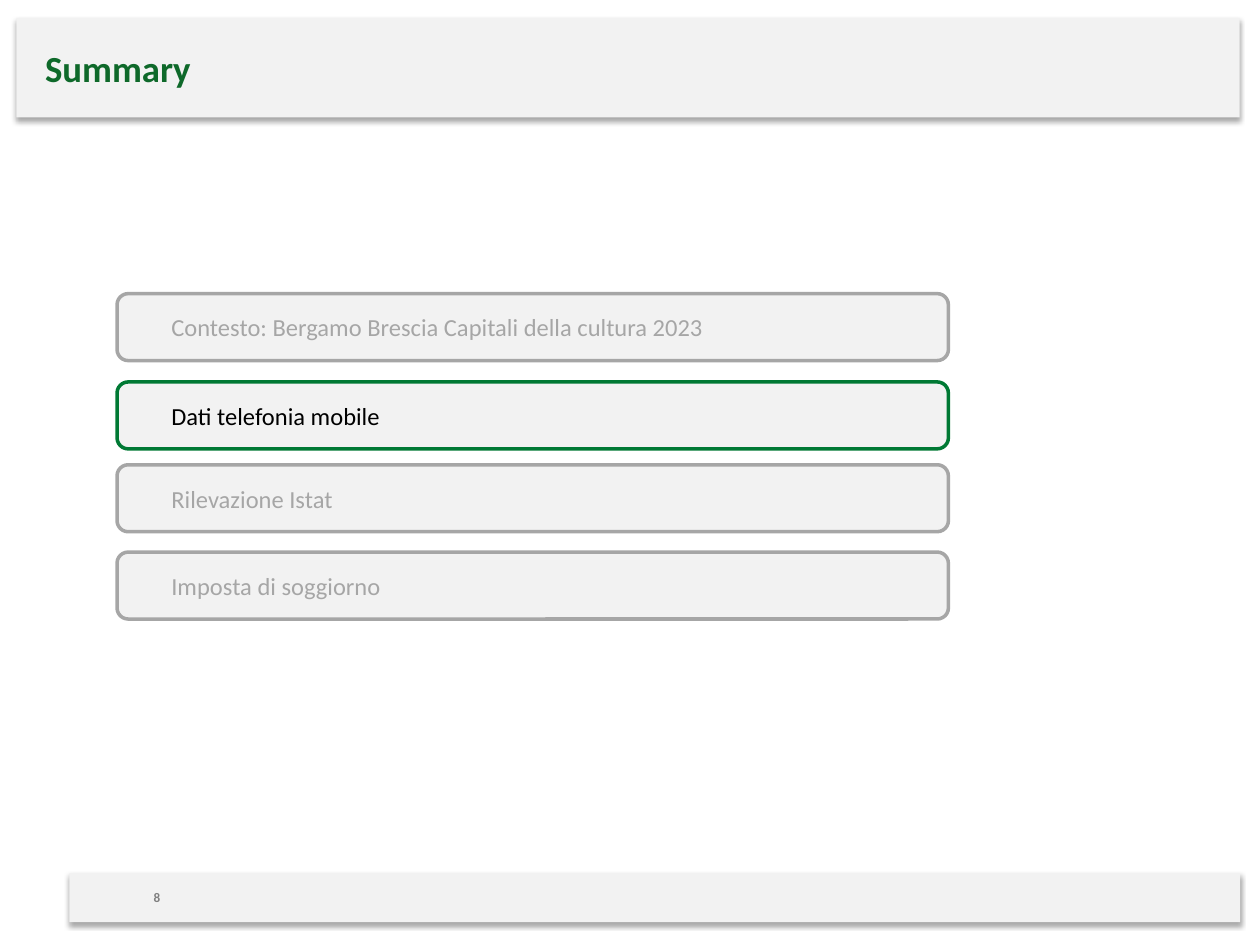
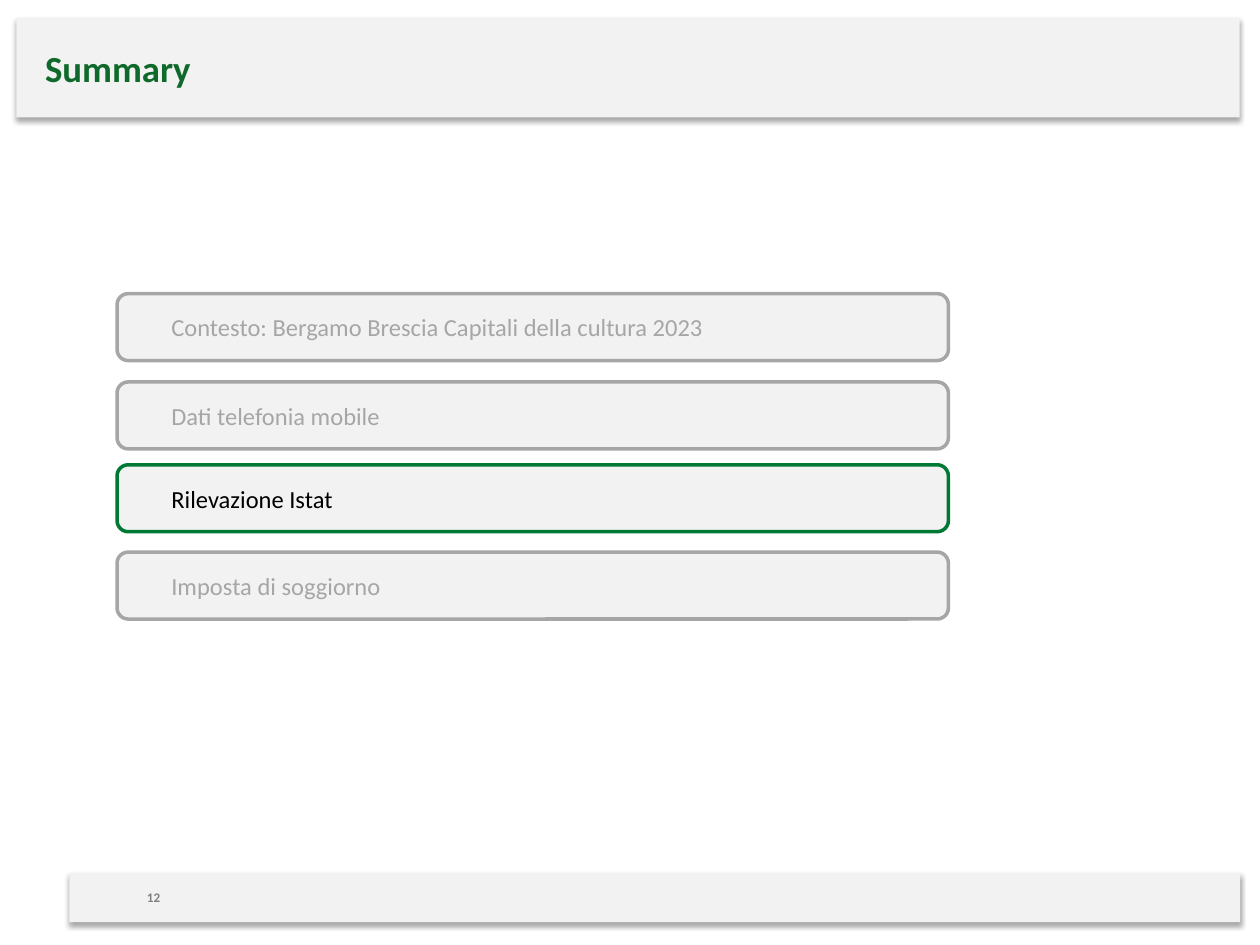
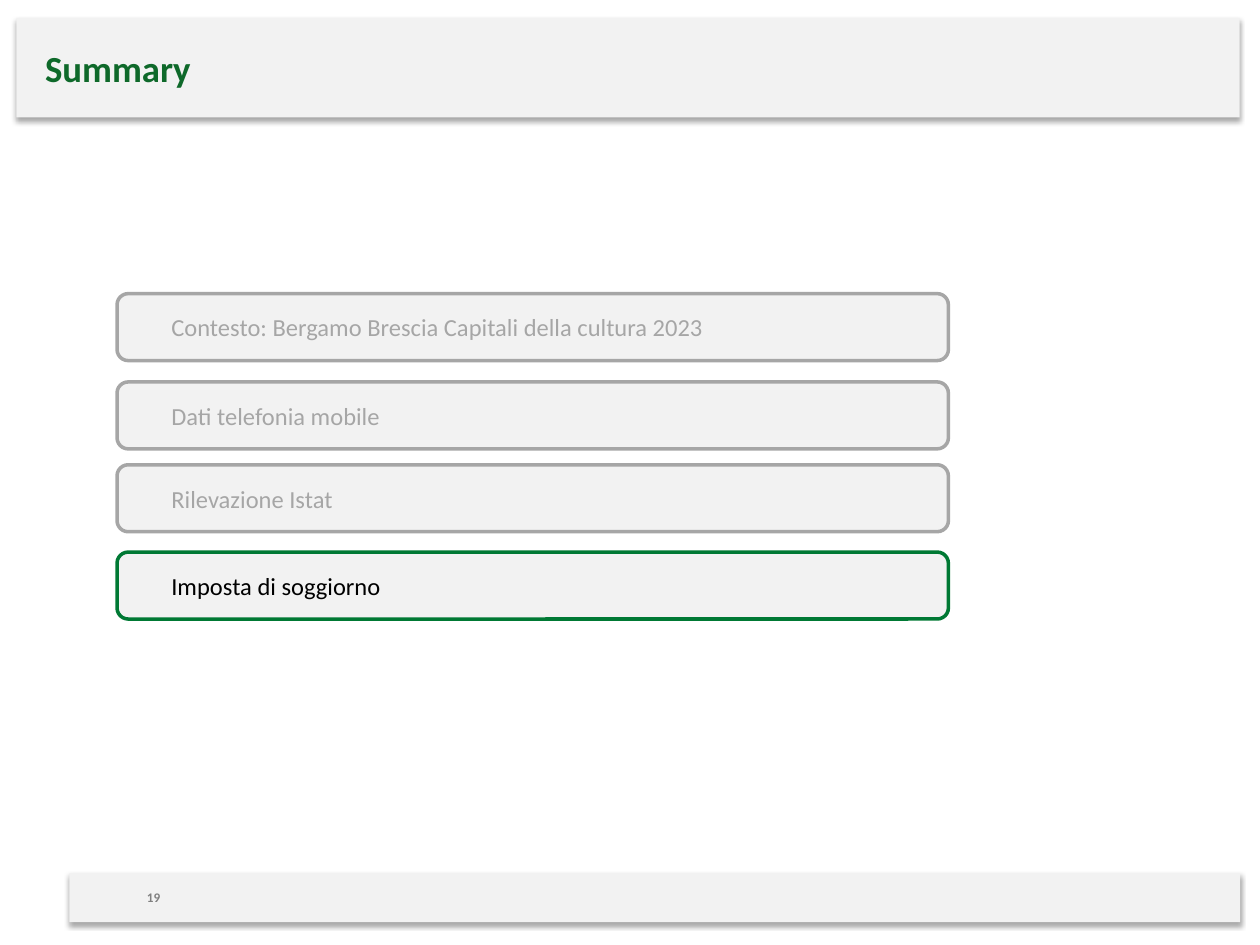
from lxml.etree import SubElement
from pptx import Presentation
from pptx.dml.color import RGBColor
from pptx.enum.shapes import MSO_SHAPE
from pptx.enum.text import MSO_ANCHOR, PP_ALIGN
from pptx.oxml import parse_xml
from pptx.oxml.ns import qn
from pptx.util import Cm, Pt

COLORS = {
    "panel": "F2F2F2",
    "title": "0E692A",
    "active_line": "007934",
    "active_text": "000000",
    "muted": "A6A6A6",
    "page": "808080",
    "shadow": "000000",
}
FONT = "Calibri"
SHADOW = (
    '<a:effectLst xmlns:a="http://schemas.openxmlformats.org/drawingml/2006/main">'
    '<a:outerShdw blurRad="39370" dist="22860" dir="5400000" rotWithShape="0">'
    f'<a:srgbClr val="{COLORS["shadow"]}"><a:alpha val="35000"/></a:srgbClr>'
    "</a:outerShdw></a:effectLst>"
)
BANDS = [(0.33, 0.36, 24.66, 2.01), (1.4, 17.6, 23.6, 0.99)]
CHAPTERS = [
    ("Contesto: Bergamo Brescia Capitali della cultura 2023", 5.92),
    ("Dati telefonia mobile", 7.7),
    ("Rilevazione Istat", 9.37),
    ("Imposta di soggiorno", 11.13),
]
SUMMARIES = [
    ("8", "Dati telefonia mobile"),
    ("12", "Rilevazione Istat"),
    ("19", "Imposta di soggiorno"),
]


def add_panel(slide, outline, box):
    panel = slide.shapes.add_shape(outline, *map(Cm, box))
    panel.shadow.inherit = False
    panel.fill.solid()
    panel.fill.fore_color.rgb = RGBColor.from_string(COLORS["panel"])
    panel.line.fill.background()
    return panel


def write(shape, text, size, color, bold=False, align=PP_ALIGN.LEFT, anchor=MSO_ANCHOR.MIDDLE):
    frame = shape.text_frame
    frame.word_wrap = True
    frame.vertical_anchor = anchor
    paragraph = frame.paragraphs[0]
    paragraph.alignment = align
    run = paragraph.add_run()
    run.text = text
    run.font.name = FONT
    run.font.size = Pt(size)
    run.font.bold = bold
    run.font.color.rgb = RGBColor.from_string(COLORS[color])
    return paragraph


deck = Presentation()
deck.slide_width = Cm(25.4)
deck.slide_height = Cm(19.05)

for page, current in SUMMARIES:
    slide = deck.slides.add_slide(deck.slide_layouts[6])

    for box in BANDS:
        band = add_panel(slide, MSO_SHAPE.RECTANGLE, box)
        properties = band.element.spPr
        properties.replace(properties.find(qn("a:effectLst")), parse_xml(SHADOW))

    title = slide.shapes.add_textbox(Cm(0.66), Cm(0.58), Cm(23.93), Cm(1.57))
    write(title, "Summary", 21, "title", bold=True)

    page_number = slide.shapes.add_textbox(Cm(2.06), Cm(17.81), Cm(1.42), Cm(0.53))
    write(page_number, page, 7.5, "page", bold=True, align=PP_ALIGN.RIGHT, anchor=MSO_ANCHOR.TOP)

    for name, top in CHAPTERS:
        active = name == current
        chapter = add_panel(slide, MSO_SHAPE.ROUNDED_RECTANGLE, (2.36, top, 16.76, 1.35))
        chapter.line.color.rgb = RGBColor.from_string(COLORS["active_line" if active else "muted"])
        chapter.line.width = Pt(2)
        chapter.text_frame.margin_left = Cm(0.19)
        label = write(chapter, name, 14, "active_text" if active else "muted")
        label.space_after = Pt(9)
        indent = label._p.get_or_add_pPr()
        indent.set("marL", str(Cm(0.84)))
        indent.set("indent", "0")
        SubElement(indent, qn("a:buNone"))

deck.save("out.pptx")
